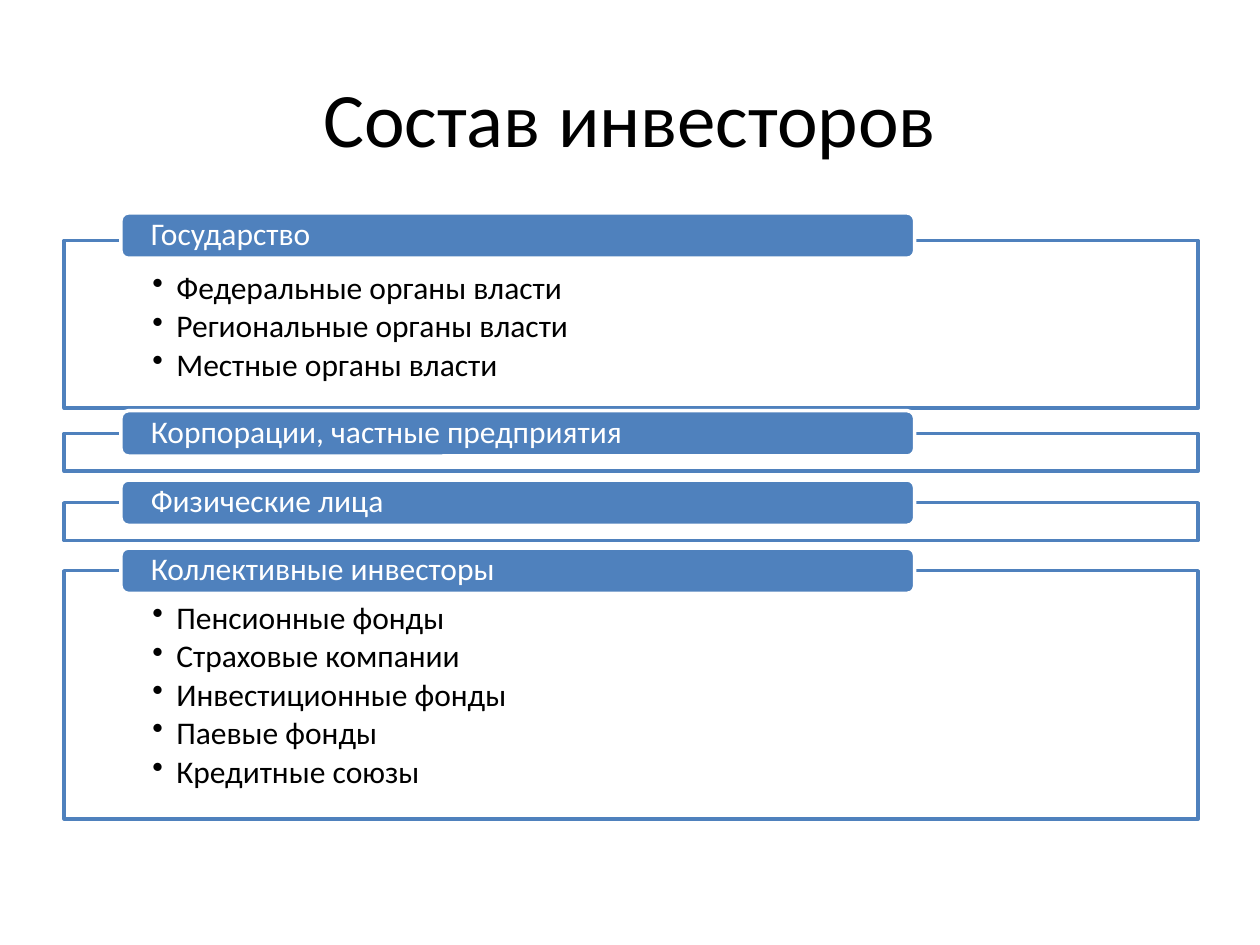
from dataclasses import dataclass

from lxml.etree import SubElement
from pptx import Presentation
from pptx.dml.color import RGBColor
from pptx.enum.shapes import MSO_SHAPE as Preset
from pptx.enum.text import MSO_ANCHOR as Anchor, PP_ALIGN as Align
from pptx.oxml.ns import qn
from pptx.util import Inches, Pt

COLORS = {"blue": "4F81BD", "white": "FFFFFF", "black": "000000"}
FONT = "Calibri"
FRAME_LEFT, FRAME_WIDTH = 0.51, 9
TAB_LEFT, TAB_WIDTH, TAB_HEIGHT = 0.96, 6.3, 0.36
BULLET_INDENT = 0.19

# Text frame margins in inches
FRAME_MARGINS = {"margin_left": 0.7, "margin_top": 0.25,
                 "margin_right": 0.7, "margin_bottom": 0.14}
TAB_MARGINS = {"margin_left": 0.22, "margin_top": 0,
               "margin_right": 0.22, "margin_bottom": 0}


@dataclass
class InvestorGroup:
    heading: str
    tab_top: float
    frame_top: float
    frame_height: float
    members: tuple[str, ...] = ()


GROUPS = [
    InvestorGroup("Государство", 1.69, 1.91, 1.33, (
        "Федеральные органы власти",
        "Региональные органы власти",
        "Местные органы власти")),
    InvestorGroup("Корпорации, частные предприятия", 3.26, 3.44, 0.3),
    InvestorGroup("Физические лица", 3.81, 3.99, 0.3),
    InvestorGroup("Коллективные инвесторы", 4.35, 4.53, 1.97, (
        "Пенсионные фонды",
        "Страховые компании",
        "Инвестиционные фонды",
        "Паевые фонды",
        "Кредитные союзы")),
]


def rgb(name: str) -> RGBColor:
    return RGBColor.from_string(COLORS[name])


def add_panel(slide, preset, box: tuple, fill: str, line: str,
              margins: dict, anchor):
    panel = slide.shapes.add_shape(preset, *map(Inches, box))
    panel.shadow.inherit = False
    panel.fill.solid()
    panel.fill.fore_color.rgb = rgb(fill)
    panel.line.color.rgb = rgb(line)
    panel.line.width = Pt(2)
    frame = panel.text_frame
    frame.word_wrap = True
    frame.vertical_anchor = anchor
    for side, inches in margins.items():
        setattr(frame, side, Inches(inches))
    return panel


def write(paragraph, text: str, color: str, size: int = 18,
          **paragraph_format) -> None:
    paragraph.text = text
    for name, value in paragraph_format.items():
        setattr(paragraph, name, value)
    for name, value in {"name": FONT, "size": Pt(size)}.items():
        setattr(paragraph.font, name, value)
    paragraph.font.color.rgb = rgb(color)


def add_bullet(paragraph) -> None:
    properties = paragraph._p.get_or_add_pPr()
    properties.set("marL", str(Inches(BULLET_INDENT)))
    properties.set("indent", str(-Inches(BULLET_INDENT)))
    bullet = properties.makeelement(qn("a:buChar"), {"char": "•"})
    properties.find(qn("a:defRPr")).addprevious(bullet)


def draw_group(slide, group: InvestorGroup) -> None:
    # Outlined frame with the members
    frame = add_panel(
        slide, Preset.RECTANGLE,
        (FRAME_LEFT, group.frame_top, FRAME_WIDTH, group.frame_height),
        "white", "blue", FRAME_MARGINS, Anchor.TOP)
    fill_color = frame.fill._xPr.find(f"{qn('a:solidFill')}/{qn('a:srgbClr')}")
    SubElement(fill_color, qn("a:alpha"), val="90000")
    for index, member in enumerate(group.members):
        text = frame.text_frame
        paragraph = text.add_paragraph() if index else text.paragraphs[0]
        write(paragraph, member, "black", level=1, alignment=Align.LEFT,
              line_spacing=0.9, space_after=Pt(2.5))
        add_bullet(paragraph)

    # Heading tab over the frame's top edge
    tab = add_panel(
        slide, Preset.ROUNDED_RECTANGLE,
        (TAB_LEFT, group.tab_top, TAB_WIDTH, TAB_HEIGHT),
        "blue", "white", TAB_MARGINS, Anchor.MIDDLE)
    write(tab.text_frame.paragraphs[0], group.heading, "white",
          alignment=Align.LEFT, line_spacing=0.9)


def main() -> None:
    deck = Presentation()
    deck.slide_width, deck.slide_height = Inches(10), Inches(7.5)
    slide = deck.slides.add_slide(deck.slide_layouts[5])

    # Title
    title = slide.shapes.title
    position = {"left": 0.5, "top": 0.3, "width": 9, "height": 1.25}
    for name, inches in position.items():
        setattr(title, name, Inches(inches))
    title.text_frame.vertical_anchor = Anchor.MIDDLE
    write(title.text_frame.paragraphs[0], "Состав инвесторов", "black", 44,
          alignment=Align.CENTER)

    # Investor groups
    for group in GROUPS:
        draw_group(slide, group)

    deck.save("out.pptx")


if __name__ == "__main__":
    main()
